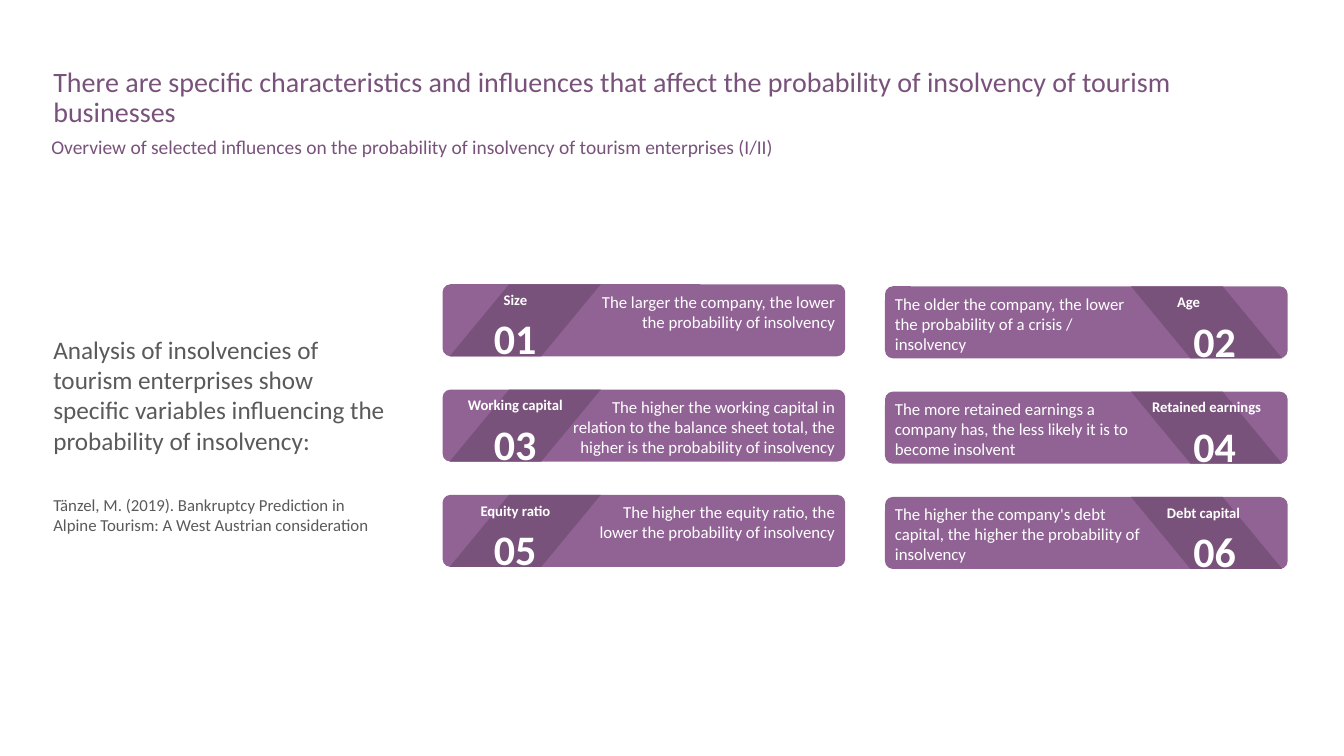
from dataclasses import dataclass

from pptx import Presentation
from pptx import util as u
from pptx.dml.color import RGBColor
from pptx.enum import shapes, text


@dataclass(frozen=True)
class Theme:
    font: str = "Calibri"
    bar: str = "916395"
    dark: str = "79527B"
    grey: str = "595A59"
    white: str = "FFFFFF"
    title: float = 20
    sub: float = 13.9
    lead: float = 18
    note: float = 12
    label: float = 10.5
    num: float = 30


class Page:
    """Draws on a grid of 100 columns by 100 rows."""

    def __init__(self, deck, theme):
        self.theme = theme
        self.slide = deck.slides.add_slide(deck.slide_layouts[6])
        self.col = deck.slide_width / 100
        self.row = deck.slide_height / 100

    def place(self, x, y, w, h):
        return (round(x * self.col), round(y * self.row),
                round(w * self.col), round(h * self.row))

    def paint(self, shape, color):
        shape.shadow.inherit = False
        shape.fill.solid()
        shape.fill.fore_color.rgb = RGBColor.from_string(color)
        shape.line.fill.background()

    def bar(self, x, y, w, h):
        shape = self.slide.shapes.add_shape(
            shapes.MSO_SHAPE.ROUNDED_RECTANGLE, *self.place(x, y, w, h))
        shape.adjustments[0] = 0.11
        self.paint(shape, self.theme.bar)

    def band(self, x, y, w, h, slant, flip):
        points = [(slant, 0), (w, 0), (w - slant, h), (0, h)]
        if flip:
            points = [(w - px, py) for px, py in points]
        spots = [self.place(x + px, y + py, 0, 0)[:2] for px, py in points]
        path = self.slide.shapes.build_freeform(*spots[0])
        path.add_line_segments(spots[1:], close=True)
        self.paint(path.convert_to_shape(), self.theme.dark)

    def text(self, x, y, w, h, lines, color, align="LEFT", bold=False,
             wrap=True, middle=False, inset=True, spacing=None, gap=0):
        """Each line is a pair of words and type size; gap parts paragraphs."""
        frame = self.slide.shapes.add_textbox(*self.place(x, y, w, h)).text_frame
        frame.word_wrap = wrap
        if middle:
            frame.vertical_anchor = text.MSO_ANCHOR.MIDDLE
        if not inset:
            frame.margin_left = frame.margin_right = 0
            frame.margin_top = frame.margin_bottom = 0
        for i, (words, size) in enumerate(lines):
            para = frame.add_paragraph() if i else frame.paragraphs[0]
            para.text = words
            para.alignment = getattr(text.PP_ALIGN, align)
            if spacing:
                para.line_spacing = spacing
            if i:
                para.space_before = u.Pt(gap)
            font = para.runs[0].font
            font.name, font.size, font.bold = self.theme.font, u.Pt(size), bold
            font.color.rgb = RGBColor.from_string(color)

    def card(self, side, y, num, label, mid, label_w, words, words_w, words_h):
        t = self.theme
        left = side == 0
        x, w, h = (32.93, 65.85)[side], 29.96, 9.53
        self.bar(x, y, w, h)
        self.band((33.45, 84.15)[side], y, 11.25, h, 4.43, not left)
        self.text(mid - label_w / 2, y + 0.2, label_w, 3.73,
                  [(label, t.label)], t.white, "CENTER", bold=True, wrap=False)
        self.text((36.6, 88.65)[side], y + 3.73, 3.45, 6.8, [(num, t.num)],
                  t.white, "CENTER", bold=True, wrap=False, middle=True, inset=False)
        words_x = x + w - words_w if left else x
        self.text(words_x, y + 0.27, words_w, words_h, [(words, t.note)],
                  t.white, "RIGHT" if left else "LEFT")


# Label, label centre, label width, statement, statement width and height
CARDS = [
    ("Size", 38.35, 3.45,
     "The larger the company, the lower the probability of insolvency", 20.4, 6.67),
    ("Age", 88.43, 3.3,
     "The older the company, the lower the probability of a crisis / insolvency",
     20.18, 9.47),
    ("Working capital", 38.35, 9.83,
     "The higher the working capital in relation to the balance sheet total, "
     "the higher is the probability of insolvency", 21.53, 9.47),
    ("Retained earnings", 89.78, 13.8,
     "The more retained earnings a company has, the less likely it is to become "
     "insolvent", 21, 9.47),
    ("Equity ratio", 38.35, 6.83,
     "The higher the equity ratio, the lower the probability of insolvency",
     20.4, 6.67),
    ("Debt capital", 89.55, 7.05,
     "The higher the company's debt capital, the higher the probability of "
     "insolvency", 21, 9.47),
]


def main():
    deck = Presentation()
    deck.slide_width, deck.slide_height = u.Inches(13.33), u.Inches(7.5)
    t = Theme()
    page = Page(deck, t)

    # Heading
    page.text(3.23, 8.4, 94.05, 8.53,
              [("There are specific characteristics and influences that affect the "
                "probability of insolvency of tourism businesses", t.title)],
              t.dark, spacing=0.9)
    page.text(3.08, 18, 94.2, 3.73,
              [("Overview of selected influences on the probability of insolvency "
                "of tourism enterprises (I/II)", t.sub)], t.dark, spacing=0.7)

    # Introduction and reference
    page.text(3.23, 23.87, 26.18, 67.2,
              [("Analysis of insolvencies of tourism enterprises show specific "
                "variables influencing the probability of insolvency:", t.lead),
               ("Tänzel, M. (2019). Bankruptcy Prediction in Alpine Tourism: "
                "A West Austrian consideration", t.note)],
              t.grey, middle=True, gap=28)

    # Cards: two columns, the right one set slightly lower
    for i, (label, *rest) in enumerate(CARDS):
        line, side = divmod(i, 2)
        y = 37.6 + 13.93 * line + 0.27 * side
        page.card(side, y, f"{i + 1:02}", label, *rest)

    deck.save("out.pptx")


if __name__ == "__main__":
    main()
